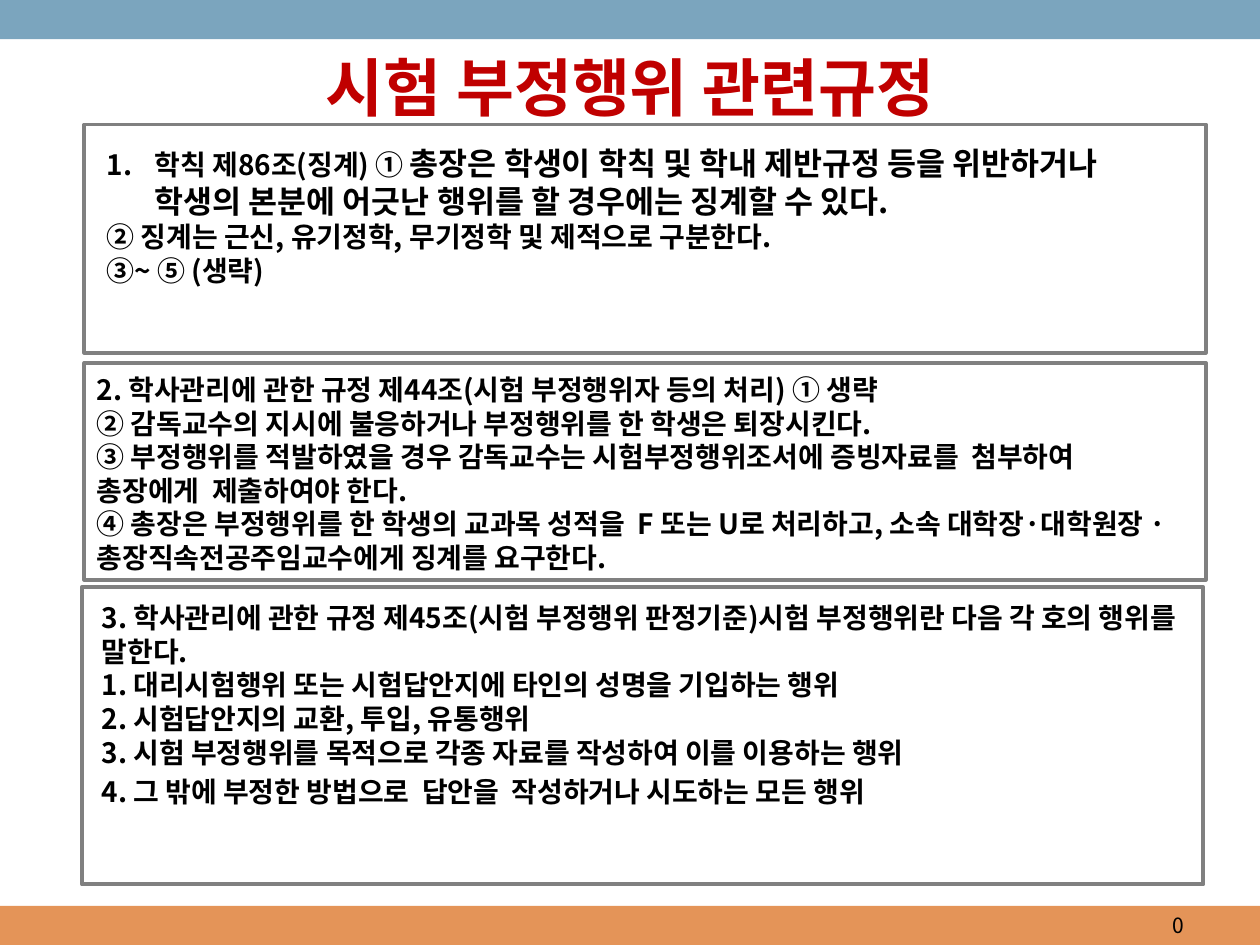
import pptx
import pptx.dml.color
import pptx.enum.shapes
import pptx.enum.text
import pptx.oxml.ns
import pptx.util
from dataclasses import dataclass
from lxml import etree

Cm, Pt = pptx.util.Cm, pptx.util.Pt
RGB = pptx.dml.color.RGBColor.from_string
ALIGN = pptx.enum.text.PP_ALIGN
ANCHOR = pptx.enum.text.MSO_ANCHOR
RECT = pptx.enum.shapes.MSO_SHAPE.RECTANGLE


@dataclass(frozen=True)
class Theme:
    font: str = "Noto Sans CJK KR"
    top_bar: str = "7BA5BE"
    bottom_bar: str = "E49458"
    title: str = "C00000"
    text: str = "000000"
    frame: str = "808080"
    title_size: float = 36
    lead_size: float = 18
    body_size: float = 16
    number_size: float = 12
    leading: float = 1.2


THEME = Theme()
WIDTH, HEIGHT, BAR = 25.4, 19.05, 0.79

# Each rule: frame box, text box relative to the frame, paragraphs.
# A paragraph is a string or a list of (text, size) runs, which is numbered.
RULES = [
    ((1.7, 2.51, 22.61, 4.6), (0.2, 0.2, 22.2, 3.15), [
        [("학칙 제86조(징계) ① ", THEME.body_size),
         ("총장은 학생이 학칙 및 학내 제반규정 등을 위반하거나 학생의 본분에 어긋난 "
          "행위를 할 경우에는 징계할 수 있다.", THEME.lead_size)],
        "② 징계는 근신, 유기정학, 무기정학 및 제적으로 구분한다.",
        "③~ ⑤ (생략)",
    ]),
    ((1.7, 7.32, 22.61, 4.37), (0, 0, 22.33, 4.37), [
        "2. 학사관리에 관한 규정 제44조(시험 부정행위자 등의 처리) ① 생략",
        "② 감독교수의 지시에 불응하거나 부정행위를 한 학생은 퇴장시킨다.",
        "③ 부정행위를 적발하였을 경우 감독교수는 시험부정행위조서에 증빙자료를  첨부하여 "
        "총장에게  제출하여야 한다.",
        "④ 총장은 부정행위를 한 학생의 교과목 성적을  F 또는 U로 처리하고, 소속 "
        "대학장·대학원장 · 총장직속전공주임교수에게 징계를 요구한다.",
    ]),
    ((1.65, 11.84, 22.61, 5.99), (0.15, 0.08, 22.23, 4.5), [
        "3. 학사관리에 관한 규정 제45조(시험 부정행위 판정기준)시험 부정행위란 다음 각 호의 "
        "행위를 말한다.",
        "1. 대리시험행위 또는 시험답안지에 타인의 성명을 기입하는 행위",
        "2. 시험답안지의 교환, 투입, 유통행위",
        "3. 시험 부정행위를 목적으로 각종 자료를 작성하여 이를 이용하는 행위",
        "4. 그 밖에 부정한 방법으로  답안을  작성하거나 시도하는 모든 행위",
    ]),
]


def apply(obj, values):
    for name, value in values.items():
        setattr(obj, name, value)


def place(sp, box):
    apply(sp, dict(zip(("left", "top", "width", "height"), map(Cm, box))))


def set_frame(tf, top, anchor=ANCHOR.TOP):
    apply(tf, {"word_wrap": True, "vertical_anchor": anchor,
               "auto_size": pptx.enum.text.MSO_AUTO_SIZE.NONE,
               "margin_left": Cm(0.25), "margin_right": Cm(0.25),
               "margin_top": Cm(top), "margin_bottom": Cm(0.13)})


def add_run(p, text, size, color=THEME.text, bold=True):
    r = p.add_run()
    r.text = text
    apply(r.font, {"name": THEME.font, "size": Pt(size), "bold": bold})
    r.font.color.rgb = RGB(color)
    ea = etree.SubElement(r.font._element, pptx.oxml.ns.qn("a:ea"))
    ea.set("typeface", THEME.font)


def set_paragraph(p, size, align=ALIGN.LEFT, before=0):
    apply(p, {"alignment": align, "space_before": Pt(before), "space_after": Pt(0),
              "line_spacing": Pt(round(size * THEME.leading, 1))})


def set_bullet(p, numbered):
    indent = Cm(0.97) if numbered else 0
    pPr = p._p.get_or_add_pPr()
    pPr.set("marL", str(indent))
    pPr.set("indent", str(-indent))
    if numbered:
        bu = etree.SubElement(pPr, pptx.oxml.ns.qn("a:buAutoNum"))
        bu.set("type", "arabicPeriod")
    else:
        etree.SubElement(pPr, pptx.oxml.ns.qn("a:buNone"))


def add_rect(s, box, fill=None, line=None):
    sp = s.shapes.add_shape(RECT, *map(Cm, box))
    sp.shadow.inherit = False
    if fill:
        sp.fill.solid()
        sp.fill.fore_color.rgb = RGB(fill)
    else:
        sp.fill.background()
    if line:
        sp.line.color.rgb = RGB(line)
        sp.line.width = Pt(2.25)
    else:
        sp.line.fill.background()


def fill_title(sp, box):
    place(sp, box)
    set_frame(sp.text_frame, 0.26)
    p = sp.text_frame.paragraphs[0]
    set_paragraph(p, THEME.title_size, ALIGN.CENTER)
    add_run(p, "시험 부정행위 관련규정", THEME.title_size, THEME.title)


def fill_rule(s, sp, box, text_box, paragraphs):
    """Draw the frame of one rule and set its text in the body placeholder."""
    add_rect(s, box, line=THEME.frame)
    dx, dy, width, height = text_box
    place(sp, (box[0] + dx, box[1] + dy, width, height))
    tf = sp.text_frame
    set_frame(tf, 0.19)
    for i, item in enumerate(paragraphs):
        p = tf.add_paragraph() if i else tf.paragraphs[0]
        numbered = isinstance(item, list)
        runs = item if numbered else [(item, THEME.body_size)]
        last_of_list = i == 4
        set_paragraph(p, max(size for _, size in runs), before=3.5 if last_of_list else 0)
        set_bullet(p, numbered)
        for text, size in runs:
            add_run(p, text, size)


def add_page_number(s, box):
    tf = s.shapes.add_textbox(*map(Cm, box)).text_frame
    set_frame(tf, 0.13, ANCHOR.MIDDLE)
    p = tf.paragraphs[0]
    p.alignment = ALIGN.RIGHT
    add_run(p, "0", THEME.number_size, bold=False)


def main():
    prs = pptx.Presentation()
    prs.slide_width, prs.slide_height = Cm(WIDTH), Cm(HEIGHT)
    s = prs.slides.add_slide(prs.slide_layouts.get_by_name("Comparison"))
    title, *bodies, spare = list(s.placeholders)
    spare._element.getparent().remove(spare._element)

    add_rect(s, (0, HEIGHT - BAR, WIDTH, BAR), fill=THEME.bottom_bar)
    add_rect(s, (0, 0, WIDTH, BAR), fill=THEME.top_bar)
    fill_title(title, (0, 0.71, WIDTH, 1.8))
    for sp, rule in zip(bodies, RULES):
        fill_rule(s, sp, *rule)
    add_page_number(s, (18.21, HEIGHT - BAR, 5.92, BAR))
    prs.save("out.pptx")


if __name__ == "__main__":
    main()
